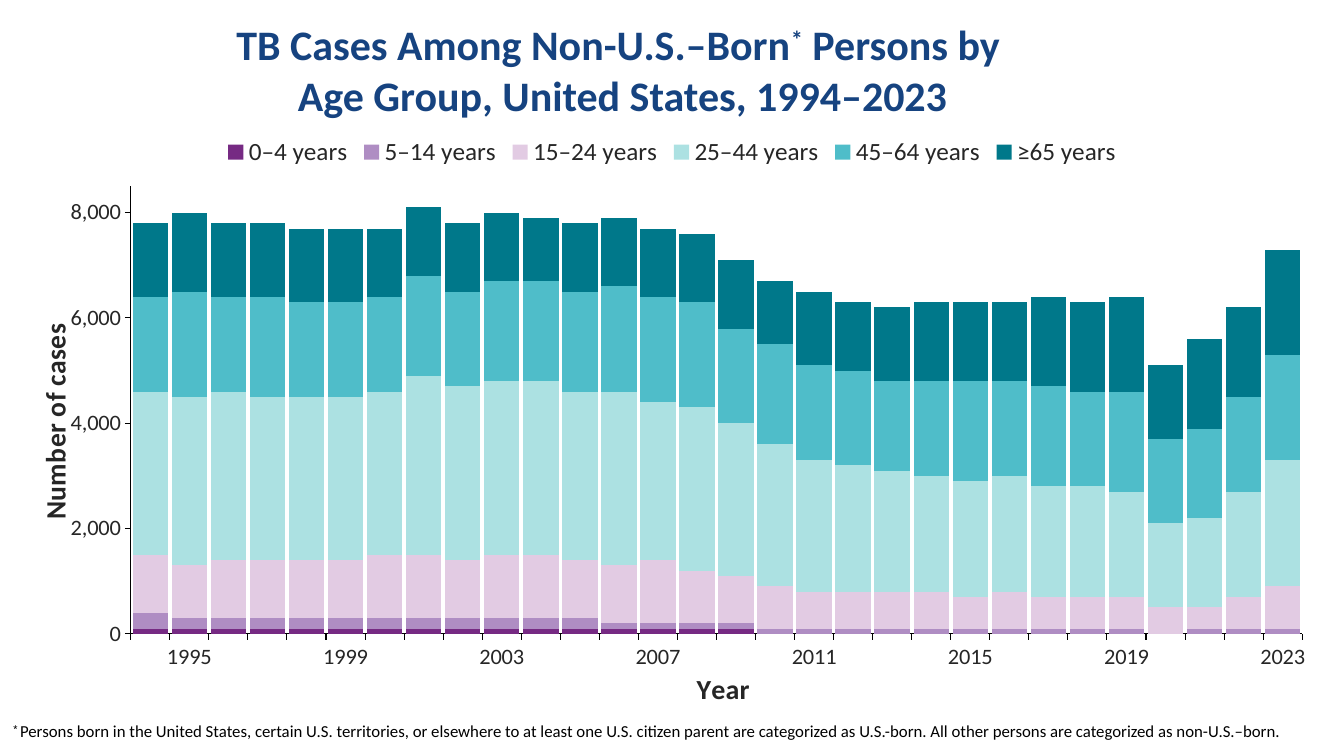
from lxml import etree
from pptx import Presentation
from pptx.chart.data import CategoryChartData
from pptx.dml.color import RGBColor
from pptx.enum.chart import XL_CHART_TYPE as CT, XL_LEGEND_POSITION as LP, XL_TICK_MARK as TM
from pptx.enum.text import MSO_ANCHOR as ANCHOR, MSO_AUTO_SIZE as AUTO, PP_ALIGN as ALIGN
from pptx.oxml.ns import qn
from pptx.util import Pt

FONT, BLACK, GREY, NAVY = "Calibri", "000000", "262626", "164380"
YEARS = range(1994, 2024)

# Age group: (fill, cases per year in hundreds)
AGE_GROUPS = {
    "0–4 years": ("762A83", [1] * 16 + [0] * 14),
    "5–14 years": ("AF8DC3", [3] + [2] * 11 + [1] * 14 + [0, 1, 1, 1]),
    "15–24 years": ("E2CBE3", [11, 10, 11, 11, 11, 11, 12, 12, 11, 12, 12, 11, 11, 12, 10,
                               9, 8, 7, 7, 7, 7, 6, 7, 6, 6, 6, 5, 4, 6, 8]),
    "25–44 years": ("ACE1E2", [31, 32, 32, 31, 31, 31, 31, 34, 33, 33, 33, 32, 33, 30, 31,
                               29, 27, 25, 24, 23, 22, 22, 22, 21, 21, 20, 16, 17, 20, 24]),
    "45–64 years": ("4FBDC9", [18, 20, 18, 19, 18, 18, 18, 19, 18, 19, 19, 19, 20, 20, 20,
                               18, 19, 18, 18, 17, 18, 19, 18, 19, 18, 19, 16, 17, 18, 20]),
    "≥65 years": ("00788A", [14, 15, 14, 14, 14, 14, 13, 13, 13, 13, 12, 13, 13, 13, 13,
                             13, 12, 14, 13, 14, 15, 15, 15, 17, 17, 18, 14, 17, 17, 20]),
}


def rgb(value):
    return RGBColor.from_string(value)


def style(font, size, color, bold=False, name=FONT):
    for key, value in dict(size=Pt(size), bold=bold, name=name).items():
        setattr(font, key, value)
    font.color.rgb = rgb(color)


def add_run(p, text, raised=False, **fmt):
    r = p.add_run()
    r.text = text
    style(r.font, **fmt)
    if raised:
        r._r.get_or_add_rPr().set("baseline", "30000")


def place(parent, **values):
    """Set a manual layout, in fractions of the chart, on a chart part."""
    layout = parent.find(qn("c:layout"))
    if layout is None:
        layout = etree.Element(qn("c:layout"))
        parent.insert(0, layout)
    manual = etree.SubElement(layout, qn("c:manualLayout"))
    for key, value in values.items():
        etree.SubElement(manual, qn(f"c:{key}")).set("val", str(value))


def add_title(slide, x, y, w, h):
    sp = slide.shapes.title
    sp.left, sp.top, sp.width, sp.height = Pt(x), Pt(y), Pt(w), Pt(h)
    tf = sp.text_frame
    tf.auto_size, tf.vertical_anchor = AUTO.NONE, ANCHOR.BOTTOM
    p = tf.paragraphs[0]
    p.alignment, p.line_spacing = ALIGN.CENTER, 1.0
    fmt = dict(size=30, color=NAVY, bold=True)
    add_run(p, "TB Cases Among Non-U.S.–Born", **fmt)
    add_run(p, "*", raised=True, **fmt)
    add_run(p, " Persons by ", **fmt)
    p.add_line_break()
    add_run(p, "Age Group, United States, 1994–2023", **fmt)


def format_axis(axis, title, rotation, x, y):
    axis.has_major_gridlines = False
    axis.major_tick_mark, axis.minor_tick_mark = TM.OUTSIDE, TM.NONE
    line = axis.format.line
    line.width, line.color.rgb = Pt(0.75), rgb(BLACK)
    style(axis.tick_labels.font, 16, GREY)
    add_run(axis.axis_title.text_frame.paragraphs[0], title, size=20, color=GREY, bold=True)
    el = axis.axis_title._element
    el.find(".//" + qn("a:bodyPr")).set("rot", str(rotation))
    place(el, xMode="edge", yMode="edge", x=x, y=y)


def add_cases_chart(slide, x, y, w, h):
    data = CategoryChartData(number_format="#,##0")
    data.categories = [str(year) if year % 4 == 3 else "" for year in YEARS]
    for name, (_, hundreds) in AGE_GROUPS.items():
        data.add_series(name, [100 * n for n in hundreds])
    chart = slide.shapes.add_chart(CT.COLUMN_STACKED, Pt(x), Pt(y), Pt(w), Pt(h), data).chart
    style(chart.font, 20, BLACK)
    chart.has_title = False
    chart.has_legend = True
    chart.legend.position, chart.legend.include_in_layout = LP.TOP, True
    style(chart.legend.font, 18, GREY)

    plot = chart.plots[0]
    plot.gap_width, plot.overlap, plot.vary_by_categories = 10, 100, False
    for series, (color, _) in zip(plot.series, AGE_GROUPS.values()):
        series.format.fill.solid()
        series.format.fill.fore_color.rgb = rgb(color)
    place(chart._chartSpace.find(".//" + qn("c:plotArea")), layoutTarget="inner",
          xMode="edge", yMode="edge", x=0.087, y=0.106, w=0.894, h=0.772)

    years, cases = chart.category_axis, chart.value_axis
    format_axis(years, "Year", 0, 0.515, 0.93)
    format_axis(cases, "Number of cases", -5400000, 0.01, 0.34)
    for key, value in dict(minimum_scale=0, maximum_scale=8500, major_unit=2000).items():
        setattr(cases, key, value)
    cases.tick_labels.number_format = "#,##0"
    cases.tick_labels.number_format_is_linked = False
    # Keep every year label, on one line
    years._element.find(qn("c:txPr")).find(qn("a:bodyPr")).set("rot", "-60000000")
    skip = etree.Element(qn("c:tickLblSkip"))
    skip.set("val", "1")
    years._element.find(qn("c:noMultiLvlLbl")).addprevious(skip)


def add_footnote(slide, x, y, w, h):
    tf = slide.shapes.add_textbox(Pt(x), Pt(y), Pt(w), Pt(h)).text_frame
    tf.word_wrap = True
    tf.margin_left = tf.margin_right = Pt(9.6)
    tf.margin_top = tf.margin_bottom = Pt(4.8)
    p = tf.paragraphs[0]
    add_run(p, "* ", raised=True, size=12, color=BLACK, name="Roboto")
    add_run(p, "Persons born in the United States, certain U.S. territories, or elsewhere to at "
               "least one U.S. citizen parent are categorized as U.S.-born. All other persons "
               "are categorized as non-U.S.–born.", size=12, color=BLACK)


def main():
    prs = Presentation()
    prs.slide_width, prs.slide_height = Pt(960), Pt(540)
    slide = prs.slides.add_slide(prs.slide_layouts[5])
    add_title(slide, 0, 13, 890, 76)
    add_cases_chart(slide, 12, 89.3, 936, 421.2)
    add_footnote(slide, 0, 510, 960, 25)
    prs.save("out.pptx")


if __name__ == "__main__":
    main()
